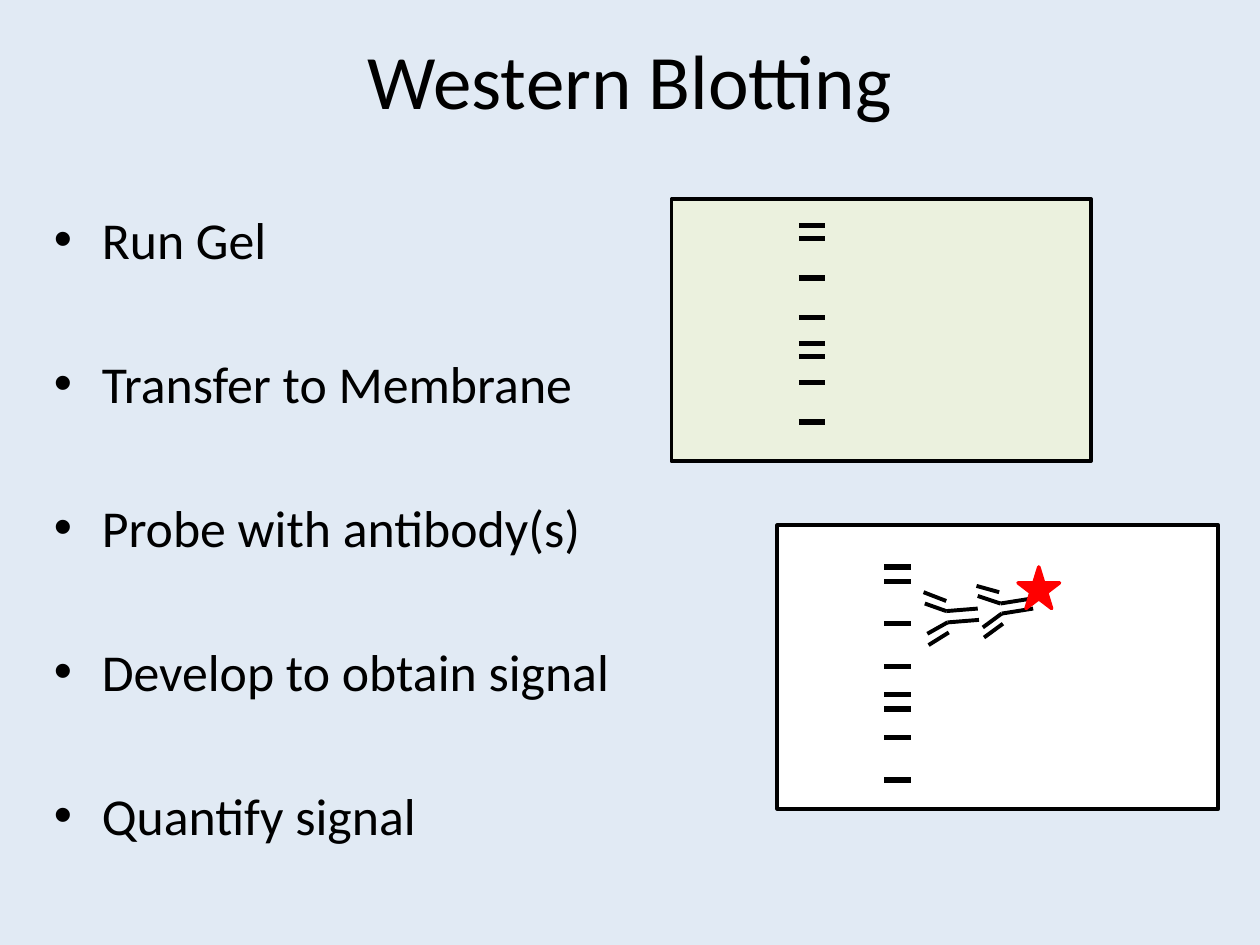
import pptx
import pptx.dml.color
import pptx.enum.shapes
import pptx.enum.text
import pptx.oxml.ns
import pptx.util
from lxml import etree

Inches = pptx.util.Inches
Pt = pptx.util.Pt
MSO_SHAPE = pptx.enum.shapes.MSO_SHAPE
ALIGN = pptx.enum.text.PP_ALIGN
ANCHOR = pptx.enum.text.MSO_ANCHOR

STEPS = ["Run Gel", "Transfer to Membrane", "Probe with antibody(s)",
         "Develop to obtain signal", "Quantify signal"]
BAND_STEPS = [0, 1, 4, 7, 9, 10, 12, 15]
PRIMARY_ANTIBODY = [
    (7.51, 4.85, 7.34, 4.79), (7.52, 4.94, 7.36, 5.03),
    (7.53, 5.02, 7.37, 5.12), (7.51, 4.77, 7.33, 4.7),
    (7.52, 4.94, 7.77, 4.92), (7.51, 4.85, 7.76, 4.83),
]
SECONDARY_ANTIBODY = [
    (7.94, 4.79, 7.76, 4.73), (7.95, 4.87, 7.8, 4.98),
    (7.96, 4.95, 7.81, 5.06), (7.93, 4.7, 7.75, 4.65),
    (7.95, 4.87, 8.2, 4.83), (7.94, 4.79, 8.19, 4.75),
]


def color(hex_code):
    return pptx.dml.color.RGBColor.from_string(hex_code)


def apply(target, values):
    for name, value in values.items():
        setattr(target, name, value)


class SlideBuilder:
    ink = "000000"
    font = "Calibri"

    def __init__(self, slide):
        self.slide = slide

    def background(self, fill):
        self.slide.background.fill.solid()
        self.slide.background.fill.fore_color.rgb = color(fill)

    def text(self, box, lines, size, frame_format, paragraph_format, gap=0, bullet=None):
        frame = self.slide.shapes.add_textbox(*map(Inches, box)).text_frame
        apply(frame, {"word_wrap": True, **frame_format})
        for index, line in enumerate(lines):
            paragraph = frame.add_paragraph() if index else frame.paragraphs[0]
            apply(paragraph, {"space_before": Pt(gap if index else 0), **paragraph_format})
            run = paragraph.add_run()
            run.text = line
            apply(run.font, {"name": self.font, "size": Pt(size)})
            run.font.color.rgb = color(self.ink)
            if bullet:
                self.bullet(paragraph, bullet)

    def bullet(self, paragraph, character):
        properties = paragraph._p.get_or_add_pPr()
        apply_indent = {"marL": Inches(0.38), "indent": Inches(-0.38)}
        for name, value in apply_indent.items():
            properties.set(name, str(int(value)))
        qn = pptx.oxml.ns.qn
        etree.SubElement(properties, qn("a:buFont")).set("typeface", "Arial")
        etree.SubElement(properties, qn("a:buChar")).set("char", character)

    def shape(self, kind, box, fill, line, width, holder=None):
        shape = (holder or self.slide).shapes.add_shape(kind, *map(Inches, box))
        shape.shadow.inherit = False
        shape.fill.solid()
        shape.fill.fore_color.rgb = color(fill)
        shape.line.color.rgb = color(line)
        shape.line.width = Pt(width)

    def group(self):
        return self.slide.shapes.add_group_shape()

    def lines(self, ends, width, holder=None):
        for end in ends:
            line = (holder or self.slide).shapes.add_connector(
                pptx.enum.shapes.MSO_CONNECTOR.STRAIGHT, *map(Inches, end))
            line.line.color.rgb = color(self.ink)
            line.line.width = Pt(width)
            etree.SubElement(line._element.spPr, pptx.oxml.ns.qn("a:effectLst"))

    def bands(self, left, top, bottom, holder=None):
        pitch = (bottom - top) / BAND_STEPS[-1]
        heights = [top + step * pitch for step in BAND_STEPS]
        self.lines([(left, y, left + 0.21, y) for y in heights], 3, holder)


def main():
    deck = pptx.Presentation()
    apply(deck, {"slide_width": Inches(10), "slide_height": Inches(7.5)})
    builder = SlideBuilder(deck.slides.add_slide(deck.slide_layouts[6]))
    builder.background("E1EAF4")

    builder.text((0.5, 0, 9, 1.25), ["Western Blotting"], 44,
                 {"vertical_anchor": ANCHOR.MIDDLE}, {"alignment": ALIGN.CENTER})
    builder.text((0.33, 1.6, 4.83, 5.5), STEPS, 29.6,
                 {"vertical_anchor": ANCHOR.TOP}, {"alignment": ALIGN.LEFT},
                 gap=46.8, bullet="•")

    builder.shape(MSO_SHAPE.RECTANGLE, (5.33, 1.58, 3.33, 2.08), "EBF1DE", builder.ink, 2.25)
    builder.bands(6.34, 1.79, 3.35)

    builder.shape(MSO_SHAPE.RECTANGLE, (6.17, 4.17, 3.5, 2.25), "FFFFFF", builder.ink, 2.25)
    builder.bands(7.02, 4.5, 6.19, builder.group())
    builder.lines(PRIMARY_ANTIBODY, 2.25, builder.group())
    labelled_antibody = builder.group()
    builder.lines(SECONDARY_ANTIBODY, 2.25, labelled_antibody)
    builder.shape(MSO_SHAPE.STAR_5_POINT, (8.08, 4.5, 0.33, 0.33),
                  "FF0000", "FF0000", 2, labelled_antibody)

    deck.save("out.pptx")


if __name__ == "__main__":
    main()
